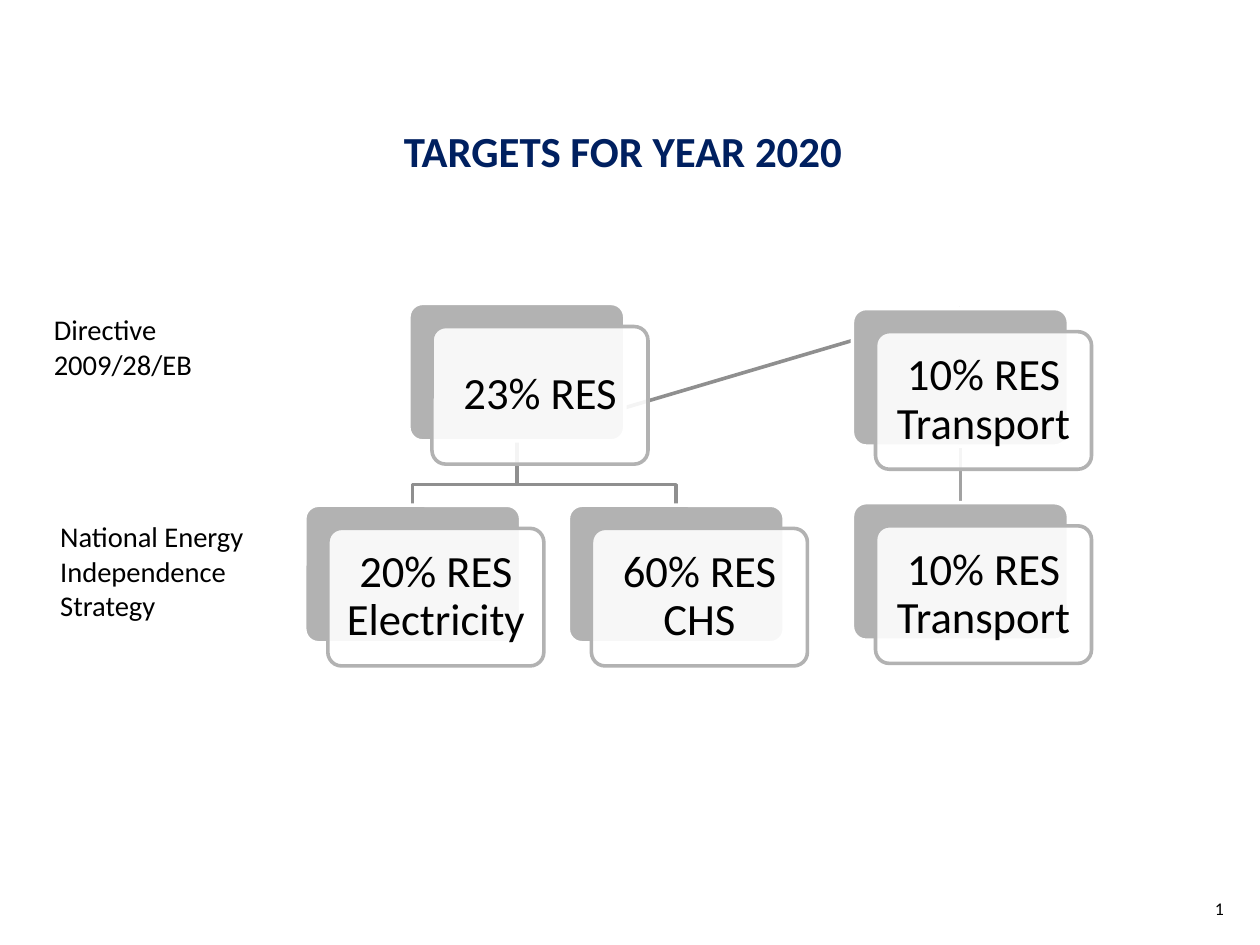
from pptx import Presentation
from pptx.dml.color import RGBColor
from pptx.enum.shapes import MSO_CONNECTOR, MSO_SHAPE
from pptx.enum.text import MSO_ANCHOR, PP_ALIGN
from pptx.oxml.ns import qn
from pptx.util import Inches, Pt
from lxml.etree import SubElement

COLORS = {
    "black": "000000",
    "white": "FFFFFF",
    "navy": "002060",
    "card": "B2B2B2",
    "link": "8F8F8F",
    "light_link": "A2A2A2",
}
FONT = "Calibri"
CARD_W, CARD_H = 1.68, 1.07
CARD_SHIFT = 0.18

# Left and top of each back card, with its text
CARDS = [
    (3.18, 2.36, "23% RES"),
    (2.37, 3.93, "20% RES Electricity"),
    (4.42, 3.93, "60% RES CHS"),
    (6.63, 2.4, "10% RES Transport"),
    (6.63, 3.91, "10% RES Transport"),
]
SIDE_LABELS = [
    (0.32, 2.38, 0.64, "Directive 2009/28/EB"),
    (0.37, 3.99, 0.91, "National Energy Independence Strategy"),
]


def rgb(name):
    return RGBColor.from_string(COLORS[name])


def write(shape, text, size=16, color="black", bold=False, align=PP_ALIGN.LEFT,
          anchor=MSO_ANCHOR.TOP, inset=(0.1, 0.05), spacing=None, wrap=True):
    tf = shape.text_frame
    tf.word_wrap = wrap
    tf.vertical_anchor = anchor
    tf.margin_left = tf.margin_right = Inches(inset[0])
    tf.margin_top = tf.margin_bottom = Inches(inset[1])
    p = tf.paragraphs[0]
    p.alignment = align
    if spacing:
        p.line_spacing = spacing
    r = p.add_run()
    r.text = text
    r.font.name = FONT
    r.font.size = Pt(size)
    r.font.bold = bold
    r.font.color.rgb = rgb(color)


def add_label(s, x, y, w, h, text, **fmt):
    write(s.shapes.add_textbox(Inches(x), Inches(y), Inches(w), Inches(h)), text, **fmt)


def set_line(shape, color):
    shape.line.color.rgb = rgb(color)
    shape.line.width = Pt(2)


def add_box(s, x, y, fill, line):
    box = s.shapes.add_shape(MSO_SHAPE.ROUNDED_RECTANGLE, Inches(x), Inches(y),
                             Inches(CARD_W), Inches(CARD_H))
    box.adjustments[0] = 0.1
    box.shadow.inherit = False
    box.fill.solid()
    box.fill.fore_color.rgb = rgb(fill)
    set_line(box, line)
    return box


def add_card(s, x, y, text):
    add_box(s, x, y, "card", "white")
    front = add_box(s, x + CARD_SHIFT, y + CARD_SHIFT, "white", "card")
    # Let the back card show through slightly
    color = front.fill._xPr.find(qn("a:solidFill"))[0]
    SubElement(color, qn("a:alpha"), val="90000")
    write(front, text, size=25, align=PP_ALIGN.CENTER, anchor=MSO_ANCHOR.MIDDLE,
          inset=(0.1, 0.1), spacing=0.9)


def add_straight(s, x1, y1, x2, y2, color):
    line = s.shapes.add_connector(MSO_CONNECTOR.STRAIGHT, Inches(x1), Inches(y1),
                                  Inches(x2), Inches(y2))
    set_line(line, color)
    SubElement(line._element.spPr, qn("a:effectLst"))


def add_elbow(s, x1, y1, x2, y2, bend_y):
    points = [(x1, bend_y), (x2, bend_y), (x2, y2)]
    builder = s.shapes.build_freeform(Inches(x1), Inches(y1))
    builder.add_line_segments([(Inches(x), Inches(y)) for x, y in points], close=False)
    elbow = builder.convert_to_shape()
    elbow.shadow.inherit = False
    elbow.fill.background()
    set_line(elbow, "link")


def main():
    prs = Presentation()
    prs.slide_width, prs.slide_height = Inches(9.8), Inches(7.35)
    s = prs.slides.add_slide(prs.slide_layouts[5])

    # Title and slide number
    title = s.shapes.title
    title.left, title.top = Inches(0.13), Inches(0.97)
    title.width, title.height = Inches(9.43), Inches(0.4)
    write(title, "TARGETS FOR YEAR 2020", size=24, color="navy", bold=True,
          align=PP_ALIGN.CENTER, inset=(0, 0))
    add_label(s, 9.45, 6.98, 0.21, 0.17, "1", size=10, inset=(0, 0), wrap=False)

    # Links between targets, behind the cards
    add_straight(s, 7.47, 3.47, 7.47, 3.91, "light_link")
    add_straight(s, 4.02, 3.42, 7.47, 2.4, "link")
    for x in (5.26, 3.21):
        add_elbow(s, 4.02, 3.42, x, 3.93, bend_y=3.77)

    # Target cards
    for x, y, text in CARDS:
        add_card(s, x, y, text)

    # Sources of the targets
    for x, y, h, text in SIDE_LABELS:
        add_label(s, x, y, 1.95, h, text)

    prs.save("out.pptx")


if __name__ == "__main__":
    main()
